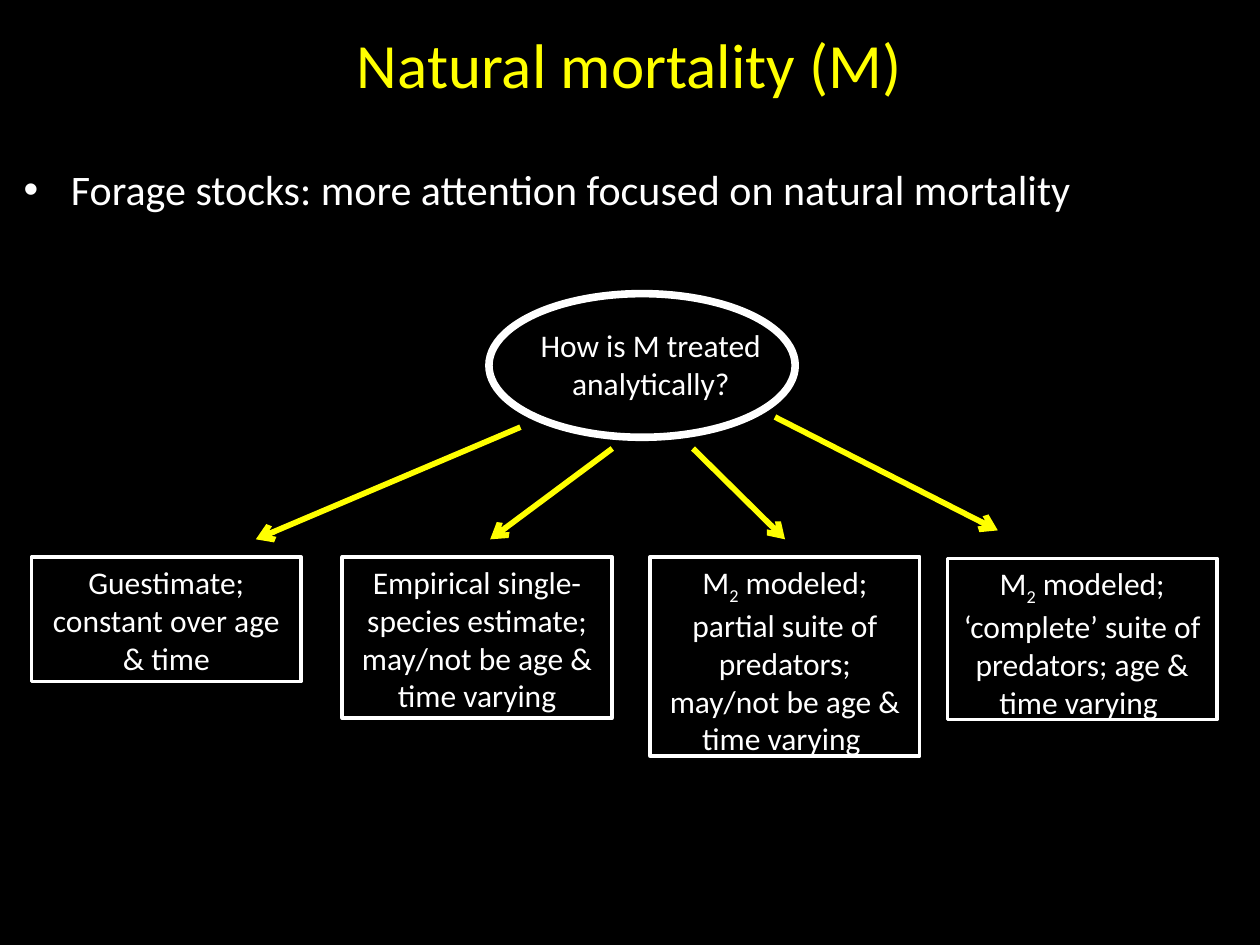
from dataclasses import dataclass

from lxml.etree import SubElement as Sub
from pptx import Presentation
from pptx.dml.color import RGBColor as RGB
from pptx.enum.shapes import MSO_CONNECTOR as Conn, MSO_SHAPE as Geo
from pptx.enum.text import MSO_ANCHOR as Anchor, PP_ALIGN as Align
from pptx.oxml.ns import qn
from pptx.util import Pt


@dataclass(frozen=True)
class Theme:
    back: RGB = RGB(0, 0, 0)
    ink: RGB = RGB(255, 255, 255)
    mark: RGB = RGB(255, 255, 0)
    font: str = "Calibri"
    title: float = 36
    point: float = 24
    label: float = 18


@dataclass(frozen=True)
class Area:
    left: float
    top: float
    width: float
    height: float

    def lengths(self) -> list:
        return [Pt(v) for v in (self.left, self.top, self.width, self.height)]


@dataclass(frozen=True)
class Choice:
    area: Area
    text: str  # text between underscores is subscript


@dataclass(frozen=True)
class Arrow:
    x1: float
    y1: float
    x2: float
    y2: float


THEME = Theme()
WIDE = 154.1  # width of every choice box

CHOICES = [
    Choice(Area(18, 318.2, WIDE, 71.3),
           "Guestimate; constant over age & time"),
    Choice(Area(195.6, 318.2, WIDE, 92.2),
           "Empirical single-species estimate; may/not be age & time varying"),
    Choice(Area(371.5, 318.2, WIDE, 113.8),
           "M_2_ modeled; partial suite of predators; may/not be age & time varying "),
    Choice(Area(541.4, 319, WIDE, 92.2),
           "M_2_ modeled; ‘complete’ suite of predators; age & time varying "),
]

ARROWS = [
    Arrow(297.4, 244.1, 146.2, 308.2),
    Arrow(349.9, 256.3, 280.1, 308.2),
    Arrow(396, 256.3, 448.6, 308.2),
    Arrow(442.8, 238.3, 570.2, 303.1),
]


def write(shape, text: str, size: float, tint: RGB, align=Align.CENTER,
          bullet: bool = False) -> None:
    frame = shape.text_frame
    frame.word_wrap = True
    frame.vertical_anchor = Anchor.TOP
    para = frame.paragraphs[0]
    para.alignment = align
    if bullet:
        props = para._p.get_or_add_pPr()
        props.set("marL", str(Pt(27)))
        props.set("indent", str(Pt(-27)))
        Sub(props, qn("a:buFont"), typeface="Arial")
        Sub(props, qn("a:buChar"), char="•")
    para.font.name = THEME.font
    para.font.size = Pt(size)
    para.font.color.rgb = tint
    for i, part in enumerate(text.split("_")):
        run = para.add_run()
        run.text = part
        if i % 2:
            run._r.get_or_add_rPr().set("baseline", "-25000")


def add_text(slide, area: Area, text: str, size: float, tint: RGB, **style) -> None:
    write(slide.shapes.add_textbox(*area.lengths()), text, size, tint, **style)


def add_outline(slide, kind, area: Area, weight: float):
    shape = slide.shapes.add_shape(kind, *area.lengths())
    shape.shadow.inherit = False
    shape.fill.background()
    shape.line.color.rgb = THEME.ink
    shape.line.width = Pt(weight)
    return shape


def add_arrow(slide, arrow: Arrow) -> None:
    ends = [Pt(v) for v in (arrow.x1, arrow.y1, arrow.x2, arrow.y2)]
    line = slide.shapes.add_connector(Conn.STRAIGHT, *ends)
    line.line.color.rgb = THEME.mark
    line.line.width = Pt(3.25)
    Sub(line.line._get_or_add_ln(), qn("a:tailEnd"), type="arrow")
    Sub(line._element.spPr, qn("a:effectLst"))


def main() -> None:
    deck = Presentation()
    deck.slide_width, deck.slide_height = Pt(720), Pt(540)
    slide = deck.slides.add_slide(deck.slide_layouts[6])
    slide.background.fill.solid()
    slide.background.fill.fore_color.rgb = THEME.back

    # Title and lead point
    add_text(slide, Area(-0.7, 10.8, 720.7, 51.1), "Natural mortality (M)",
             THEME.title, THEME.mark)
    add_text(slide, Area(6.5, 90, 671.8, 36),
             "Forage stocks: more attention focused on natural mortality",
             THEME.point, THEME.ink, align=Align.LEFT, bullet=True)

    # Central question
    add_text(slide, Area(291.6, 182.9, 160.6, 49.7),
             "How is M treated analytically?", THEME.label, THEME.ink)
    add_outline(slide, Geo.OVAL, Area(279.4, 167.8, 175, 82.1), 4.33)

    # Choices and the arrows to them
    for choice in CHOICES:
        box = add_outline(slide, Geo.RECTANGLE, choice.area, 2)
        write(box, choice.text, THEME.label, THEME.ink)
    for arrow in ARROWS:
        add_arrow(slide, arrow)

    deck.save("out.pptx")


if __name__ == "__main__":
    main()
